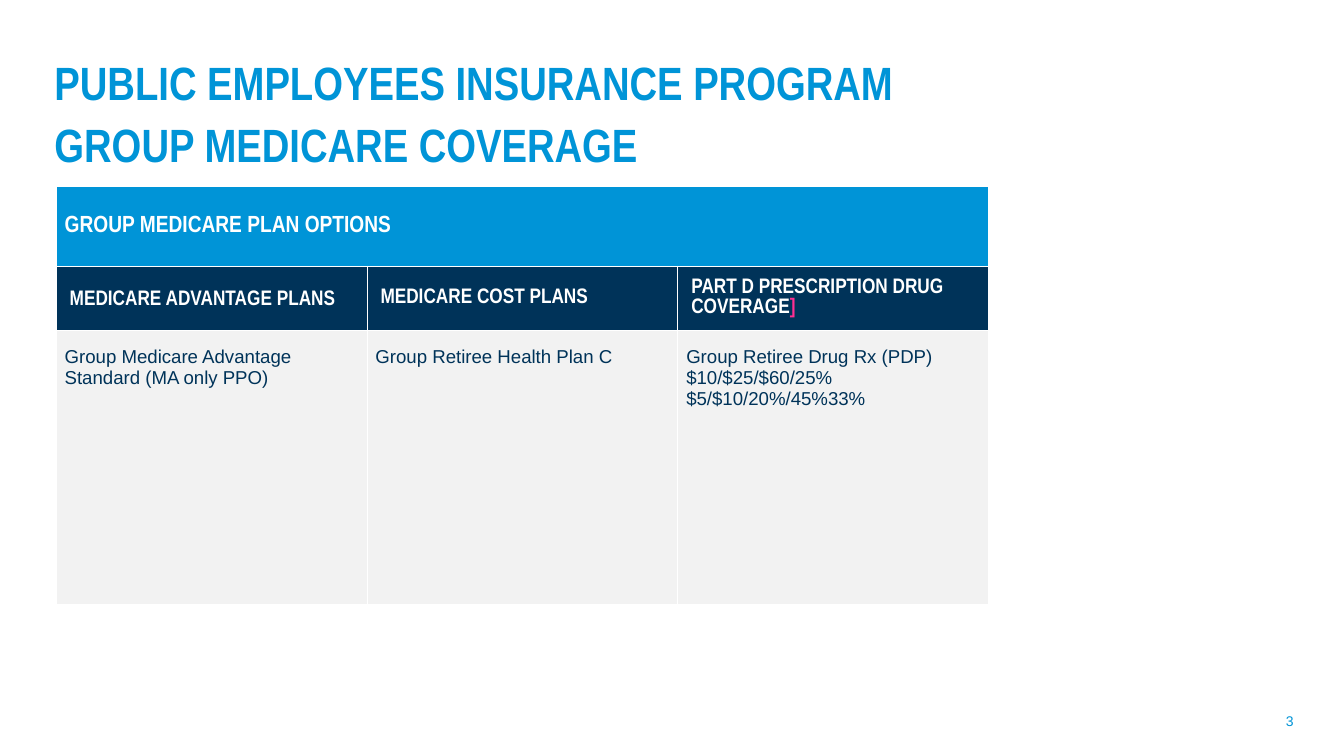
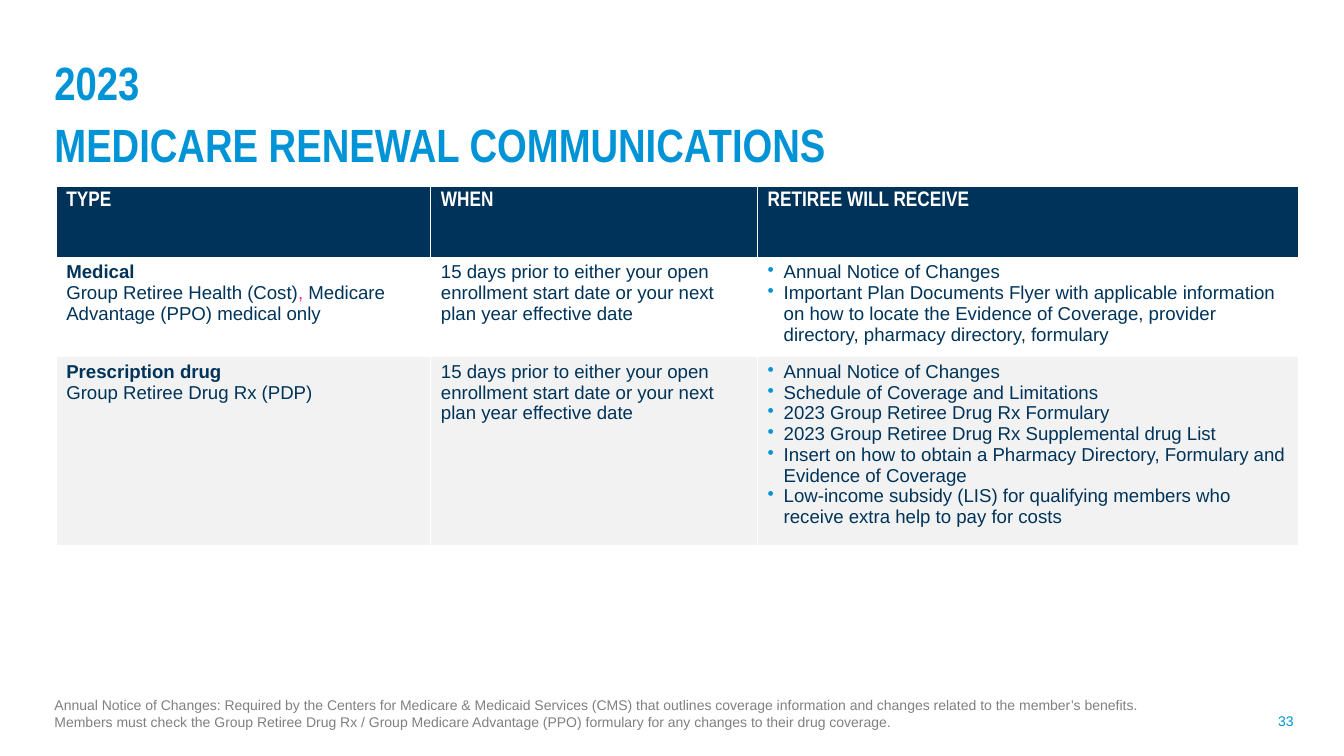
import pptx
import pptx.util
import pptx.dml.color
import pptx.enum.text
import pptx.oxml.ns
from lxml import etree

Inches = pptx.util.Inches
Pt = pptx.util.Pt
RGBColor = pptx.dml.color.RGBColor
ALIGN = pptx.enum.text.PP_ALIGN
ANCHOR = pptx.enum.text.MSO_ANCHOR

SKY = RGBColor(0x00, 0x94, 0xD7)
NAVY = RGBColor(0x00, 0x33, 0x59)
PALE = RGBColor(0xF2, 0xF2, 0xF2)
WHITE = RGBColor(0xFF, 0xFF, 0xFF)
GRAY = RGBColor(0x80, 0x80, 0x80)
PINK = RGBColor(0xFF, 0x2F, 0x92)

BODY_FONT = "Arial"
HEAD_FONT = "Arial Narrow"
HEADING = dict(font=HEAD_FONT, size=18, color=WHITE, bold=True)
TABLE_LEFT, TABLE_TOP = 0.67, 2.22
DELIVERY = "15 days prior to either your open enrollment start date or your next plan year effective date"


def add_child(parent, tag, **attributes):
    return etree.SubElement(parent, pptx.oxml.ns.qn(tag), attributes)


def add_bullet(para):
    properties = para._p.get_or_add_pPr()
    indent = Inches(0.19)
    properties.set("marL", str(indent))
    properties.set("indent", str(-indent))
    add_child(add_child(properties, "a:buClr"), "a:srgbClr", val=str(SKY))
    add_child(properties, "a:buChar", char="•")


def write_text(frame, lines, font=BODY_FONT, size=16, color=NAVY, bold=False,
               align=ALIGN.LEFT, spacing=1.0, gap=0, bullets=False):
    """Each line is a string or a list of (text, format changes) pairs."""
    for index, line in enumerate(lines):
        para = frame.add_paragraph() if index else frame.paragraphs[0]
        if bullets:
            add_bullet(para)
        para.alignment = align
        para.line_spacing = spacing
        para.space_before = Pt(gap if index else 0)
        spans = [(line, {})] if isinstance(line, str) else line
        for text, changes in spans:
            span = para.add_run()
            span.text = text
            span.font.name = font
            span.font.size = Pt(size)
            span.font.bold = changes.get("bold", bold)
            span.font.color.rgb = changes.get("color", color)


def add_text(page, box, lines, anchor=ANCHOR.TOP, top_inset=0.05, **style):
    frame = page.shapes.add_textbox(*map(Inches, box)).text_frame
    frame.word_wrap = True
    frame.vertical_anchor = anchor
    frame.margin_top = Inches(top_inset)
    write_text(frame, lines, **style)


def add_page(deck, title, number):
    """Add a blank slide with the shared title and page number."""
    page = deck.slides.add_slide(deck.slide_layouts[6])
    add_text(page, (14.94, 8.34, 0.56, 0.48), [number], anchor=ANCHOR.MIDDLE,
             size=12, color=SKY, align=ALIGN.RIGHT)
    add_text(page, (0.55, 0.53, 14.27, 1.23), title, top_inset=0.19,
             font=HEAD_FONT, size=40, color=SKY, bold=True, spacing=0.9, gap=10)
    return page


def add_grid(page, left, top, widths, heights):
    table = page.shapes.add_table(
        len(heights), len(widths), Inches(left), Inches(top),
        Inches(sum(widths)), Inches(sum(heights))).table
    table.horz_banding = False
    for column, width in zip(table.columns, widths):
        column.width = Inches(width)
    for row, height in zip(table.rows, heights):
        row.height = Inches(height)
    return table


def fill_cell(cell, lines, fill, insets, anchor=ANCHOR.TOP, **style):
    """Insets run left, top, right, bottom."""
    (cell.margin_left, cell.margin_top,
     cell.margin_right, cell.margin_bottom) = map(Inches, insets)
    cell.vertical_anchor = anchor
    properties = cell._tc.get_or_add_tcPr()
    for side in ("L", "R", "T", "B"):
        border = add_child(properties, "a:ln" + side, w=str(Pt(1)))
        add_child(add_child(border, "a:solidFill"), "a:srgbClr", val=str(WHITE))
    cell.fill.solid()
    cell.fill.fore_color.rgb = fill
    write_text(cell.text_frame, lines, **style)


def add_plan_options(page, left, top):
    table = add_grid(page, left, top, [3.7] * 3, [0.95, 0.63, 3.27])
    table.cell(0, 0).merge(table.cell(0, 2))
    fill_cell(table.cell(0, 0), ["GROUP MEDICARE PLAN OPTIONS"], SKY,
              (0.1, 0.03, 0.05, 0.03), anchor=ANCHOR.MIDDLE, spacing=0.9,
              **{**HEADING, "size": 20})
    plans = [
        ("MEDICARE ADVANTAGE PLANS", 1.2,
         ["Group Medicare Advantage Standard (MA only PPO)"]),
        ("MEDICARE COST PLANS", 1.0, ["Group Retiree Health Plan C"]),
        ([("PART D PRESCRIPTION DRUG COVERAGE", {}), ("]", {"color": PINK})], 1.0,
         ["Group Retiree Drug Rx (PDP)", "$10/$25/$60/25%", "$5/$10/20%/45%33%"]),
    ]
    for column, (heading, spacing, options) in enumerate(plans):
        fill_cell(table.cell(1, column), [heading], NAVY, (0.16, 0.08, 0.16, 0.08),
                  anchor=ANCHOR.MIDDLE, spacing=spacing, **HEADING)
        fill_cell(table.cell(2, column), options, PALE, (0.1, 0.2, 0.05, 0.2))


def add_communications(page, left, top):
    table = add_grid(page, left, top, [4.46, 3.89, 6.44], [0.84, 1.1, 2.08])
    insets = (0.12, 0.06, 0.12, 0.06)
    for column, heading in enumerate(["TYPE", "WHEN", "RETIREE WILL RECEIVE"]):
        fill_cell(table.cell(0, column), [heading], NAVY, insets, **HEADING)
    mailings = [
        ("Medical",
         [("Group Retiree Health (Cost)", {}), (", ", {"color": PINK}),
          ("Medicare Advantage (PPO) medical only", {})],
         WHITE,
         ["Annual Notice of Changes",
          "Important Plan Documents Flyer with applicable information on how to locate "
          "the Evidence of Coverage, provider directory, pharmacy directory, formulary"]),
        ("Prescription drug", "Group Retiree Drug Rx (PDP)", PALE,
         ["Annual Notice of Changes",
          "Schedule of Coverage and Limitations",
          "2023 Group Retiree Drug Rx Formulary",
          "2023 Group Retiree Drug Rx Supplemental drug List",
          "Insert on how to obtain a Pharmacy Directory, Formulary and Evidence of Coverage",
          "Low-income subsidy (LIS) for qualifying members who receive extra help to pay for costs"]),
    ]
    for row, (kind, plan, fill, documents) in enumerate(mailings, start=1):
        fill_cell(table.cell(row, 0), [[(kind, {"bold": True})], plan], fill, insets)
        fill_cell(table.cell(row, 1), [DELIVERY], fill, insets)
        fill_cell(table.cell(row, 2), documents, fill, insets, bullets=True)


def main():
    deck = pptx.Presentation()
    deck.slide_width, deck.slide_height = Inches(16), Inches(9)

    page = add_page(deck, ["PUBLIC EMPLOYEES INSURANCE PROGRAM",
                           "GROUP MEDICARE COVERAGE"], "3")
    add_plan_options(page, TABLE_LEFT, TABLE_TOP)

    page = add_page(deck, ["2023", "MEDICARE RENEWAL COMMUNICATIONS"], "33")
    add_text(page, (0.55, 8.34, 13.18, 0.4), [
        "Annual Notice of Changes: Required by the Centers for Medicare & Medicaid Services (CMS) "
        "that outlines coverage information and changes related to the member’s benefits.",
        "Members must check the Group Retiree Drug Rx / Group Medicare Advantage (PPO) formulary "
        "for any changes to their drug coverage."],
        anchor=ANCHOR.BOTTOM, size=12, color=GRAY)
    add_communications(page, TABLE_LEFT, TABLE_TOP)

    deck.save("out.pptx")


if __name__ == "__main__":
    main()
